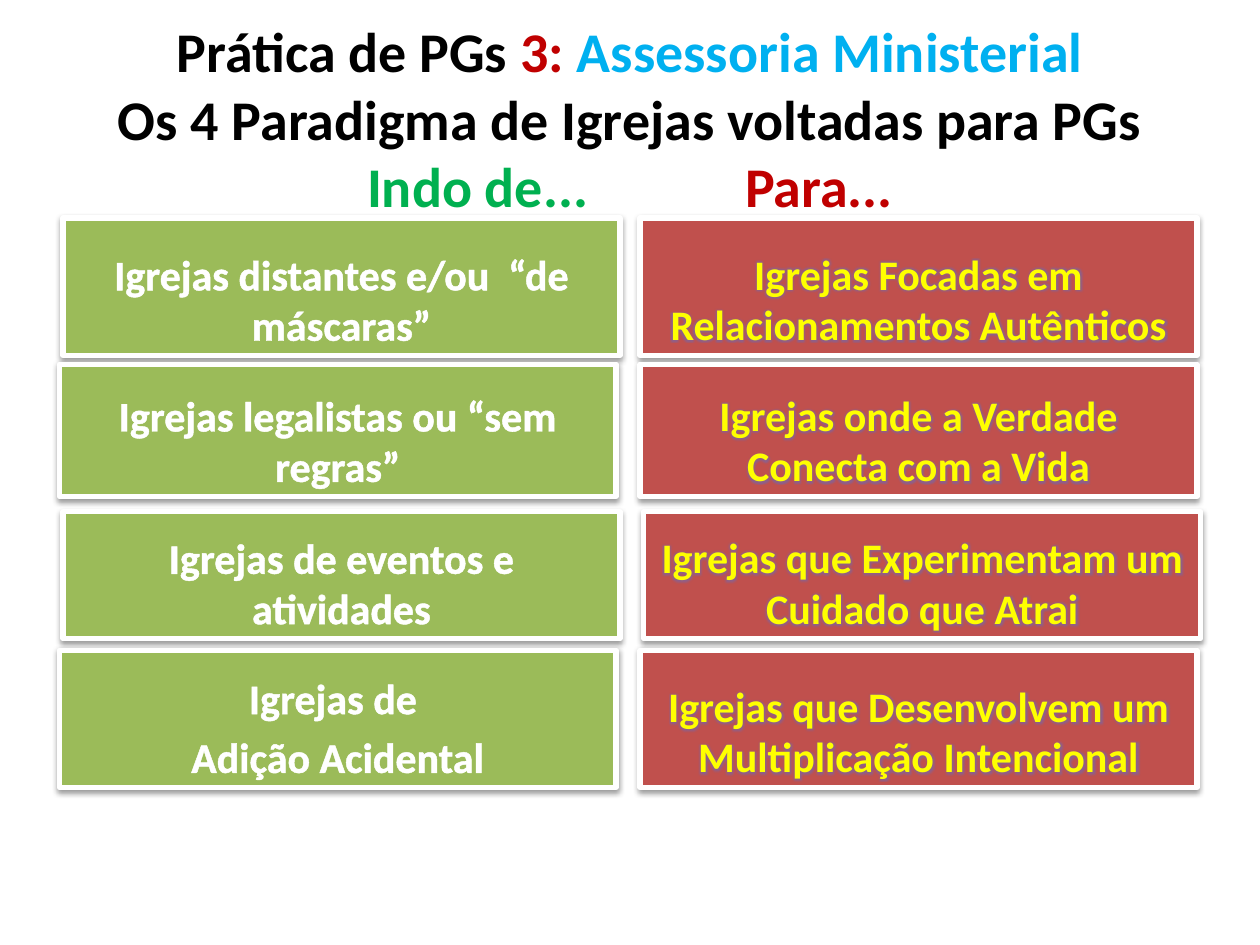
from lxml import etree
from pptx import Presentation
from pptx import util as u
from pptx.dml.color import RGBColor
from pptx.enum import shapes, text
from pptx.oxml import parse_xml
from pptx.oxml.ns import nsdecls, qn

GREEN, RED, WHITE, YELLOW = "9BBB59", "C0504D", "FFFFFF", "FFFF00"
BOX_W = 4.42

TITLE = [
    [("Prática de PGs ", "000000"), ("3: ", "C00000"),
     ("Assessoria Ministerial", "00B0F0")],
    [("Os 4 Paradigma de Igrejas voltadas para PGs", "000000")],
    [("Indo de...\t\t\t", "00B050"), ("Para...", "C00000")],
]

ROWS = [
    (1.73, 1.09, 0.5, ["Igrejas distantes e/ou  “de máscaras”"],
     5.08, ["Igrejas Focadas em Relacionamentos Autênticos"]),
    (2.89, 1.05, 0.47, ["Igrejas legalistas ou “sem regras”"],
     5.08, ["Igrejas onde a Verdade Conecta com a Vida"]),
    (4.06, 1.01, 0.5, ["Igrejas de eventos e atividades"],
     5.11, ["Igrejas que Experimentam um Cuidado que Atrai"]),
    (5.16, 1.09, 0.47, ["Igrejas de ", "Adição Acidental"],
     5.08, ["Igrejas que Desenvolvem um Multiplicação Intencional"]),
]


def rgb(color):
    return RGBColor.from_string(color)


def add_run(p, content, size, color, outline=False, glow=None):
    r = p.add_run()
    r.text = content
    r.font.size = u.Pt(size)
    r.font.bold = True
    r.font.name = "Calibri"
    r.font.color.rgb = rgb(color)
    rpr = r.font.fill._xPr
    if outline:
        rpr.insert(0, parse_xml(
            f'<a:ln {nsdecls("a")} w="{u.Pt(1.45)}"><a:solidFill>'
            f'<a:srgbClr val="{color}"/></a:solidFill></a:ln>'))
    if glow:
        rpr.find(qn("a:solidFill")).addnext(parse_xml(
            f'<a:effectLst {nsdecls("a")}><a:glow rad="45500">'
            f'<a:srgbClr val="{glow}"><a:alpha val="35000"/></a:srgbClr>'
            '</a:glow></a:effectLst>'))
    return r


def add_shadow(sp):
    sp.shadow.inherit = False
    effects = sp._element.spPr.find(qn("a:effectLst"))
    shadow = etree.SubElement(
        effects, qn("a:outerShdw"), blurRad=str(u.Pt(3.1)),
        dist=str(u.Pt(1.6)), dir="5400000", rotWithShape="0")
    color = etree.SubElement(shadow, qn("a:srgbClr"), val="000000")
    etree.SubElement(color, qn("a:alpha"), val="38000")


def add_title(s, x, y, w, h):
    sp = s.shapes.add_textbox(*map(u.Inches, (x, y, w, h)))
    tf = sp.text_frame
    tf.word_wrap = True
    tf.vertical_anchor = text.MSO_ANCHOR.MIDDLE
    p = tf.paragraphs[0]
    p.alignment = text.PP_ALIGN.CENTER
    for i, line in enumerate(TITLE):
        if i:
            p.add_line_break()
        for content, color in line:
            add_run(p, content, 32, color)


def add_box(s, x, y, w, h, lines, fill, color, glow=None):
    sp = s.shapes.add_shape(shapes.MSO_SHAPE.RECTANGLE,
                            *map(u.Inches, (x, y, w, h)))
    sp.fill.solid()
    sp.fill.fore_color.rgb = rgb(fill)
    sp.line.color.rgb = rgb(WHITE)
    sp.line.width = u.Pt(3)
    add_shadow(sp)
    tf = sp.text_frame
    tf.word_wrap = True
    tf.vertical_anchor = text.MSO_ANCHOR.BOTTOM
    for i, line in enumerate(lines):
        p = tf.add_paragraph() if i else tf.paragraphs[0]
        p.alignment = text.PP_ALIGN.CENTER
        p.space_before = u.Pt(4.8)
        add_run(p, line, 24, color, outline=True, glow=glow)


def main():
    prs = Presentation()
    prs.slide_width, prs.slide_height = u.Inches(10), u.Inches(7.5)
    s = prs.slides.add_slide(prs.slide_layouts[6])
    add_title(s, 0.5, 0.31, 9, 1.25)
    for y, h, from_x, from_lines, to_x, to_lines in ROWS:
        add_box(s, from_x, y, BOX_W, h, from_lines, GREEN, WHITE)
        add_box(s, to_x, y, BOX_W, h, to_lines, RED, YELLOW, glow="2F7DFF")
    prs.save("out.pptx")


if __name__ == "__main__":
    main()
